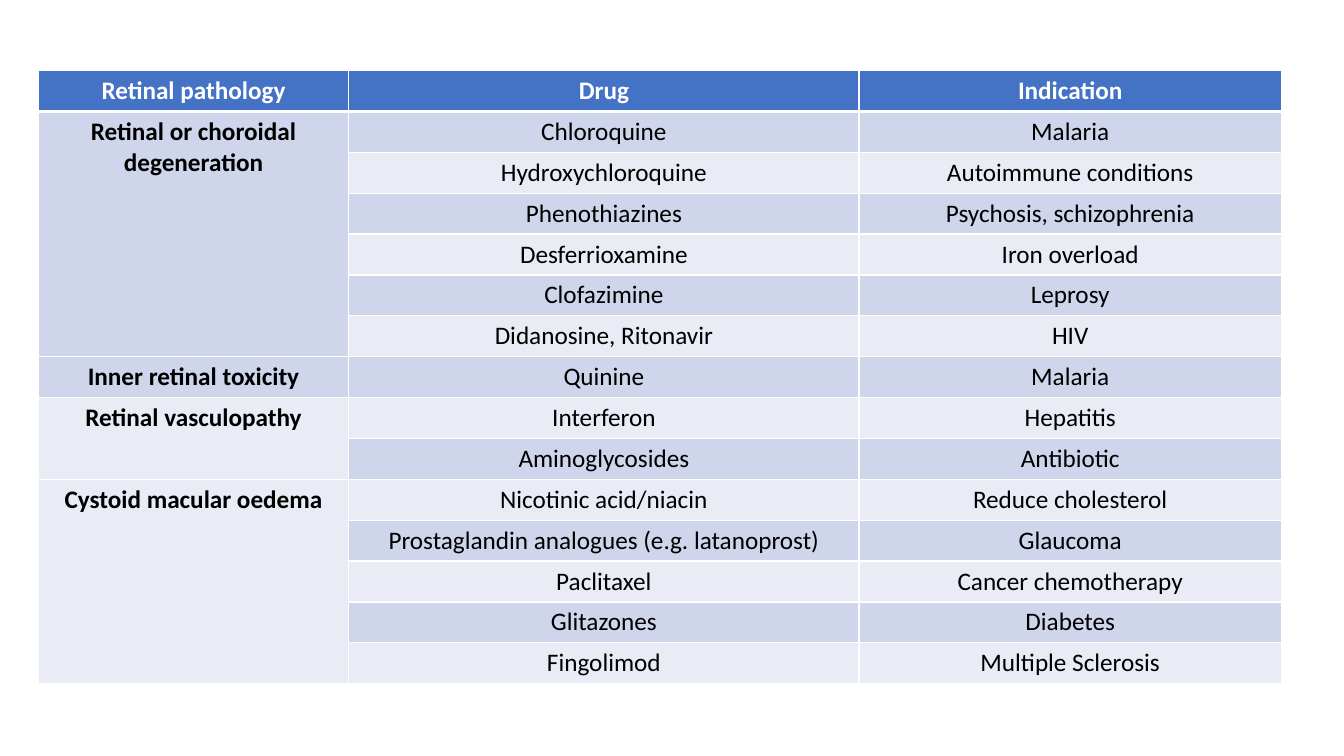
"""Build a slide with a table of drugs that cause retinal pathology."""
from lxml import etree
from pptx import Presentation
from pptx import util as u
from pptx.dml import color
from pptx.enum import text
from pptx.oxml import ns

COLORS = {"header": "4472C4", "odd": "CFD5EA", "even": "E9EBF5",
          "white": "FFFFFF", "black": "000000"}
HEADINGS = ("Retinal pathology", "Drug", "Indication")
COLUMN_WIDTHS = (3.08, 5.06, 4.19)
PATHOLOGIES = {
    "Retinal or choroidal degeneration": [
        ("Chloroquine", "Malaria"),
        ("Hydroxychloroquine", "Autoimmune conditions"),
        ("Phenothiazines", "Psychosis, schizophrenia"),
        ("Desferrioxamine", "Iron overload"),
        ("Clofazimine", "Leprosy"),
        ("Didanosine, Ritonavir", "HIV"),
    ],
    "Inner retinal toxicity": [("Quinine", "Malaria")],
    "Retinal vasculopathy": [
        ("Interferon", "Hepatitis"),
        ("Aminoglycosides", "Antibiotic"),
    ],
    "Cystoid macular oedema": [
        ("Nicotinic acid/niacin", "Reduce cholesterol"),
        ("Prostaglandin analogues (e.g. latanoprost)", "Glaucoma"),
        ("Paclitaxel", "Cancer chemotherapy"),
        ("Glitazones", "Diabetes"),
        ("Fingolimod", "Multiple Sclerosis"),
    ],
}


def rgb(name):
    return color.RGBColor.from_string(COLORS[name])


def set_borders(cell, widths):
    tc_pr = cell._tc.get_or_add_tcPr()
    for side, width in widths.items():
        ln = etree.SubElement(tc_pr, ns.qn(f"a:ln{side}"), w=str(u.Pt(width)))
        fill = etree.SubElement(ln, ns.qn("a:solidFill"))
        etree.SubElement(fill, ns.qn("a:srgbClr"), val=COLORS["white"])


def style_cell(cell, row):
    set_borders(cell, {"L": 1, "R": 1, "T": 3 if row == 1 else 1,
                       "B": 3 if row == 0 else 1})
    shade = "header" if row == 0 else "odd" if row % 2 else "even"
    cell.fill.solid()
    cell.fill.fore_color.rgb = rgb(shade)


def write_cell(cell, words, bold=False, ink="black"):
    p = cell.text_frame.paragraphs[0]
    p.alignment = text.PP_ALIGN.CENTER
    r = p.add_run()
    r.text = words
    for name, value in {"name": "Calibri", "size": u.Pt(18), "bold": bold}.items():
        setattr(r.font, name, value)
    r.font.color.rgb = rgb(ink)


def add_drug_table(s):
    row_count = 1 + sum(len(drugs) for drugs in PATHOLOGIES.values())
    frame = s.shapes.add_table(row_count, len(HEADINGS), u.Inches(0.38), u.Inches(0.7),
                               u.Inches(sum(COLUMN_WIDTHS)), u.Inches(6.08))
    table = frame.table
    for column, width in zip(table.columns, COLUMN_WIDTHS):
        column.width = u.Inches(width)
    for i, row in enumerate(table.rows):
        for cell in row.cells:
            style_cell(cell, i)
    for j, heading in enumerate(HEADINGS):
        write_cell(table.cell(0, j), heading, bold=True, ink="white")
    top = 1
    for pathology, drugs in PATHOLOGIES.items():
        if len(drugs) > 1:
            table.cell(top, 0).merge(table.cell(top + len(drugs) - 1, 0))
        write_cell(table.cell(top, 0), pathology, bold=True)
        for i, entry in enumerate(drugs, top):
            for j, words in enumerate(entry, 1):
                write_cell(table.cell(i, j), words)
        top += len(drugs)


def main():
    prs = Presentation()
    prs.slide_width, prs.slide_height = u.Inches(13.33), u.Inches(7.5)
    s = prs.slides.add_slide(prs.slide_layouts[6])
    add_drug_table(s)
    prs.save("out.pptx")


if __name__ == "__main__":
    main()
